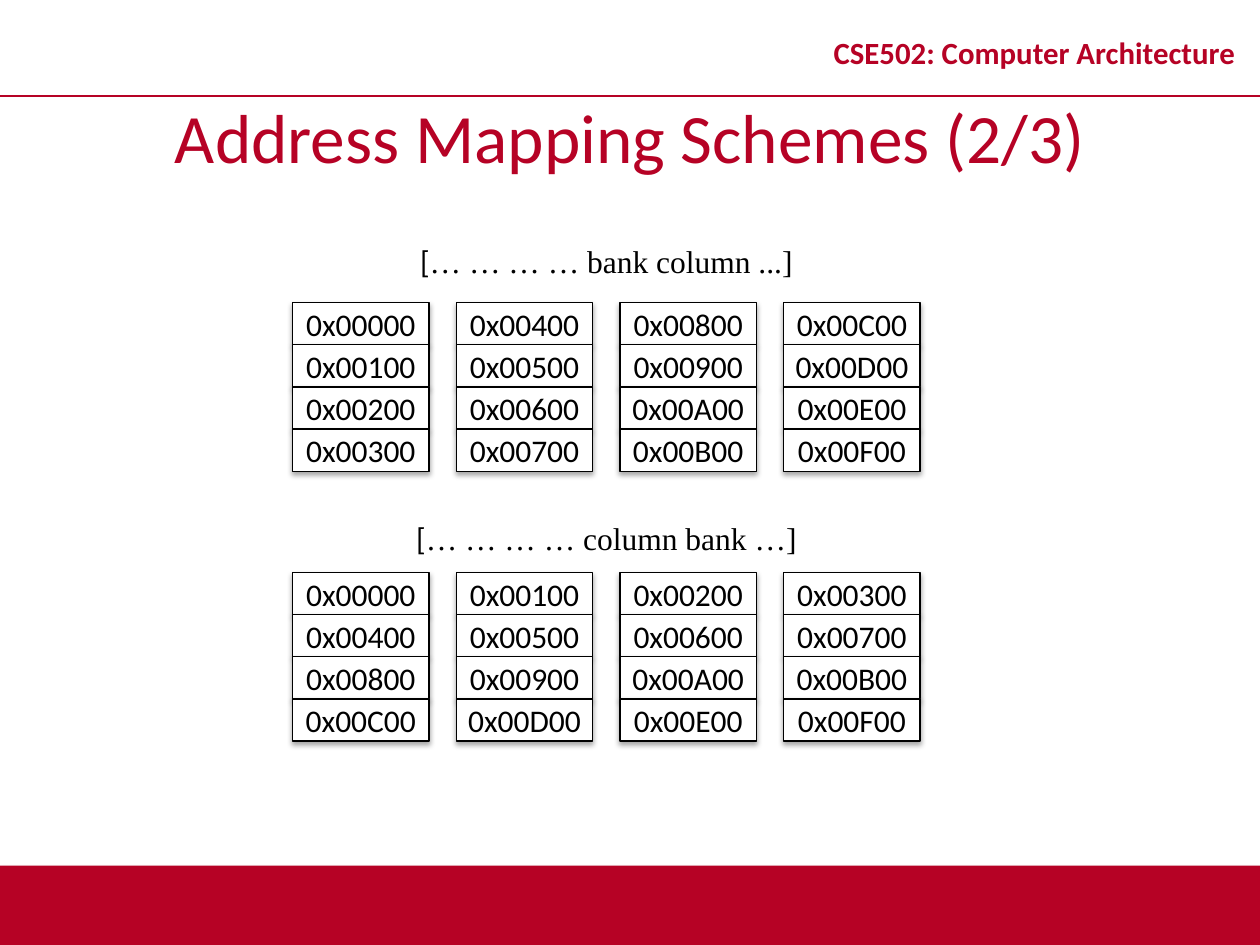
import lxml.etree
import pptx
import pptx.dml.color
import pptx.enum.shapes
import pptx.enum.text
import pptx.oxml.ns
import pptx.util

Cm = pptx.util.Cm
Pt = pptx.util.Pt
qn = pptx.oxml.ns.qn
RGBColor = pptx.dml.color.RGBColor
ANCHOR = pptx.enum.text.MSO_ANCHOR
AUTO_SIZE = pptx.enum.text.MSO_AUTO_SIZE
RECTANGLE = pptx.enum.shapes.MSO_SHAPE.RECTANGLE

CRIMSON = RGBColor(0xB6, 0x02, 0x25)
BLACK = RGBColor(0, 0, 0)
WHITE = RGBColor(255, 255, 255)


def write(box, spans, color, frame_format, **font_format):
    """Fill a box with one centred paragraph of (text, font name) spans."""
    frame = box.text_frame
    for name, value in {"word_wrap": True, **frame_format}.items():
        setattr(frame, name, value)
    para = frame.paragraphs[0]
    para.alignment = pptx.enum.text.PP_ALIGN.CENTER
    for text, font_name in spans:
        span = para.add_run()
        span.text = text
        span.font.color.rgb = color
        for name, value in {"name": font_name, **font_format}.items():
            setattr(span.font, name, value)
    return para


def add_shadowed_box(page, left, top, width, height, fill):
    """Add a borderless rectangle with a soft shadow below it."""
    box = page.shapes.add_shape(RECTANGLE, left, top, width, height)
    box.fill.solid()
    box.fill.fore_color.rgb = fill
    box.line.fill.background()
    box.shadow.inherit = False
    effects = box._element.spPr.find(qn("a:effectLst"))
    shadow = lxml.etree.SubElement(
        effects, qn("a:outerShdw"), blurRad=str(Pt(3.1)), dist=str(Pt(1.8)),
        dir="5400000", rotWithShape="0")
    shade = lxml.etree.SubElement(shadow, qn("a:srgbClr"), val="000000")
    lxml.etree.SubElement(shade, qn("a:alpha"), val="35000")
    return box


deck = pptx.Presentation()
deck.slide_width, deck.slide_height = Cm(25.4), Cm(19.05)
page = deck.slides.add_slide(deck.slide_layouts[5])

# Footer band, header rule and course name
add_shadowed_box(page, 0, Cm(17.45), deck.slide_width, Cm(1.6), CRIMSON)

rule = page.shapes.add_connector(
    pptx.enum.shapes.MSO_CONNECTOR.STRAIGHT, 0, Cm(1.93), deck.slide_width, Cm(1.93))
rule.line.color.rgb = CRIMSON
rule.line.width = Pt(1)
lxml.etree.SubElement(rule._element.spPr, qn("a:effectLst"))

course = page.shapes.add_textbox(Cm(16.31), Cm(0.33), Cm(9.09), Cm(1.6))
para = write(course, [("CSE502: Computer Architecture", "Calibri")], CRIMSON,
             {"vertical_anchor": ANCHOR.MIDDLE}, size=Pt(17.6), bold=True)
para.line_spacing = 0.8

# Title
title = page.shapes.title
title_place = {"left": 0, "top": Cm(1.93), "width": deck.slide_width, "height": Cm(1.6)}
for name, value in title_place.items():
    setattr(title, name, value)
write(title, [("Address Mapping Schemes (2/3)", "Calibri")], CRIMSON,
      {"vertical_anchor": ANCHOR.MIDDLE, "auto_size": AUTO_SIZE.NONE}, size=Pt(39.6))

# Mapping schemes: caption, its top, grid top, address step per bank and per row
GRID_LEFT, CELL_WIDTH, CELL_HEIGHT, BANK_PITCH = Cm(5.9), Cm(2.75), Cm(0.85), Cm(3.3)
BANKS = ROWS = 4
schemes = [
    ("… … … … bank column ...]", Cm(4.75), Cm(6.1), 0x400, 0x100),
    ("… … … … column bank …]", Cm(10.34), Cm(11.54), 0x100, 0x400),
]
cell_format = {"vertical_anchor": ANCHOR.MIDDLE, "margin_left": 0, "margin_right": 0}

for caption, caption_top, grid_top, bank_step, row_step in schemes:
    grid_width = (BANKS - 1) * BANK_PITCH + CELL_WIDTH
    label = page.shapes.add_textbox(GRID_LEFT, caption_top, grid_width, Cm(1.02))
    write(label, [("[", "Calibri"), (caption, "Times New Roman")], BLACK,
          {"auto_size": AUTO_SIZE.SHAPE_TO_FIT_TEXT}, size=Pt(18))

    for bank in range(BANKS):
        for row in range(ROWS):
            cell = add_shadowed_box(
                page, GRID_LEFT + bank * BANK_PITCH, grid_top + row * CELL_HEIGHT,
                CELL_WIDTH, CELL_HEIGHT, WHITE)
            cell.line.color.rgb = BLACK
            cell.line.width = Pt(0.75)
            address = f"0x{bank * bank_step + row * row_step:05X}"
            write(cell, [(address, "Calibri")], BLACK, cell_format, size=Pt(18))

deck.save("out.pptx")
